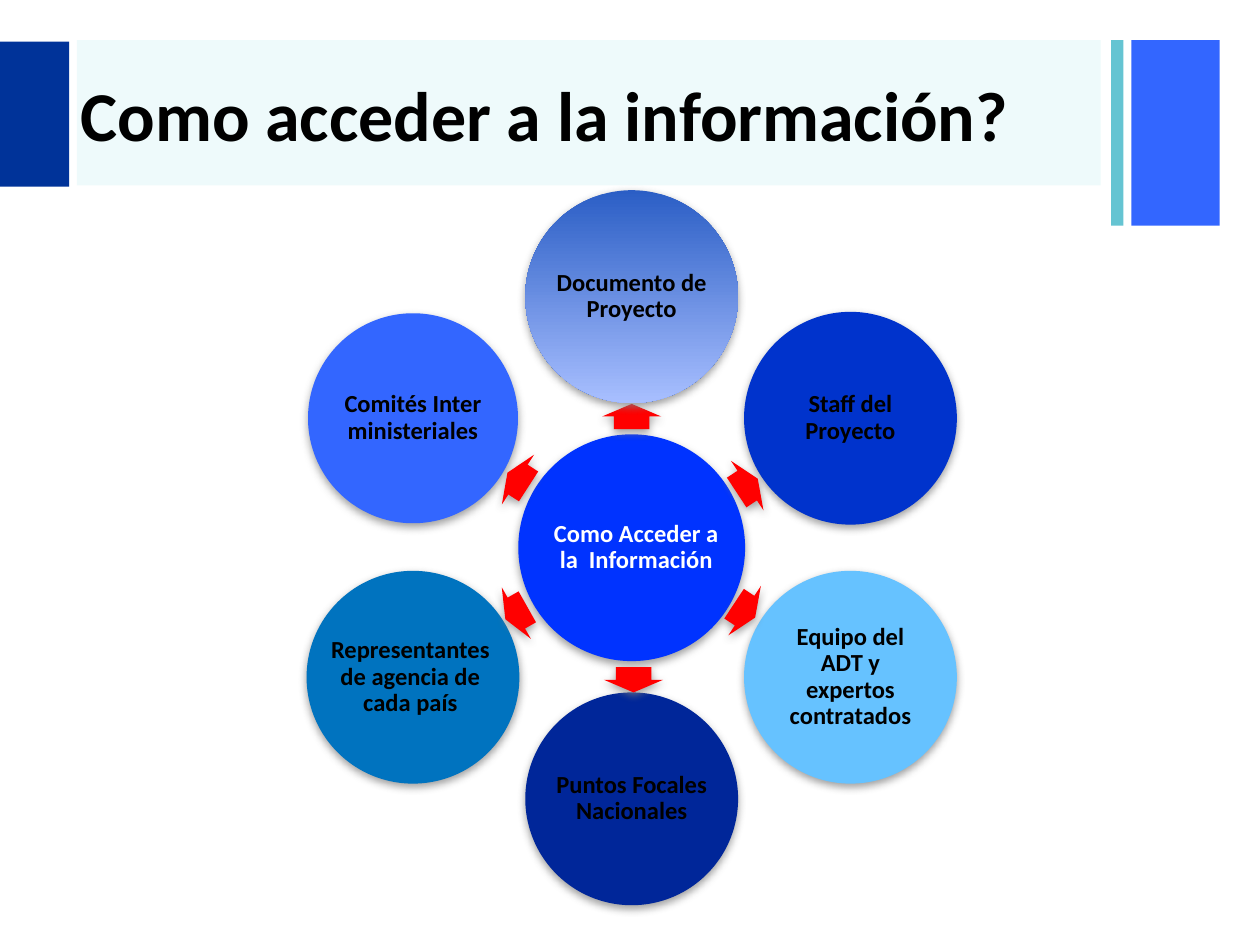
from dataclasses import dataclass

from lxml import etree
from pptx import Presentation
from pptx import util as u
from pptx.dml.color import RGBColor
from pptx.enum import shapes, text
from pptx.oxml import ns


@dataclass(frozen=True)
class Theme:
    font: str = "Calibri"
    title_size: float = 40
    label_size: float = 14
    black: str = "000000"
    white: str = "FFFFFF"
    navy: str = "003399"
    blue: str = "3366FF"
    teal: str = "65C4D2"
    banner: str = "14C5D0"
    hub: str = "0033FF"
    arrow: str = "FF0000"
    shadow: str = "808080"
    document: tuple = ("2B5EC5", "A8BFFF")
    staff: str = "0033CC"
    team: str = "66C2FF"
    focal: str = "002699"
    agency: str = "0073BF"


THEME = Theme()
HUB_X, HUB_Y = 361, 313
COLUMN_GAP, INNER_ROW, OUTER_ROW = 125, 74, 143.5
NODE_SIZE = 121.6


def add_child(parent, tag, **attributes):
    child = etree.SubElement(parent, ns.qn(tag))
    for key, value in attributes.items():
        child.set(key, str(value))
    return child


def write(slide, words, left, top, width, height, *, size, color,
          align=text.PP_ALIGN.LEFT, spacing=1.0, inset=(0, 0)):
    box = slide.shapes.add_textbox(u.Pt(left), u.Pt(top), u.Pt(width), u.Pt(height))
    frame = box.text_frame
    frame.word_wrap = True
    frame.vertical_anchor = text.MSO_ANCHOR.MIDDLE
    frame.margin_left = frame.margin_right = u.Pt(inset[0])
    frame.margin_top = frame.margin_bottom = u.Pt(inset[1])
    paragraph = frame.paragraphs[0]
    paragraph.alignment = align
    paragraph.line_spacing = spacing
    run = paragraph.add_run()
    run.text = words
    run.font.name = THEME.font
    run.font.size = u.Pt(size)
    run.font.bold = True
    run.font.color.rgb = RGBColor.from_string(color)


def add_figure(slide, kind, left, top, width, height, fill):
    """Draw a borderless preset shape; a pair of colours makes a vertical gradient."""
    figure = slide.shapes.add_shape(kind, u.Pt(left), u.Pt(top), u.Pt(width), u.Pt(height))
    figure.line.fill.background()
    figure.shadow.inherit = False
    if isinstance(fill, tuple):
        figure.fill.gradient()
        figure.fill.gradient_angle = 270
        for stop, color in zip(figure.fill.gradient_stops, fill):
            stop.color.rgb = RGBColor.from_string(color)
    else:
        figure.fill.solid()
        figure.fill.fore_color.rgb = RGBColor.from_string(fill)
    return figure


def cast_shadow(figure):
    effects = figure._element.spPr.find(ns.qn("a:effectLst"))
    shadow = add_child(effects, "a:outerShdw", blurRad=u.Pt(5), dist=u.Pt(2),
                       dir=5400000, rotWithShape=0)
    color = add_child(shadow, "a:srgbClr", val=THEME.shadow)
    add_child(color, "a:alpha", val=75000)


def add_circle(slide, words, x, y, size, fill, *, color=THEME.black,
               label_width=86.4, label_shift=0):
    circle = add_figure(slide, shapes.MSO_SHAPE.OVAL, x - size / 2, y - size / 2,
                        size, size, fill)
    cast_shadow(circle)
    write(slide, words, x + label_shift - label_width / 2, y - 43, label_width, 86,
          size=THEME.label_size, color=color, align=text.PP_ALIGN.CENTER, spacing=0.9)


def add_arrow(slide, x, y, rotation):
    width, height = 14.4, 33.8
    arrow = add_figure(slide, shapes.MSO_SHAPE.RIGHT_ARROW, x - width / 2, y - height / 2,
                       width, height, THEME.arrow)
    arrow.adjustments[0], arrow.adjustments[1] = 0.6, 0.5
    arrow.rotation = rotation
    cast_shadow(arrow)


def add_header(slide):
    rectangle = shapes.MSO_SHAPE.RECTANGLE
    add_figure(slide, rectangle, 646.5, 23, 50.5, 106, THEME.blue)
    add_figure(slide, rectangle, 635, 23, 7, 106, THEME.teal)
    banner = add_figure(slide, rectangle, 44, 23, 585, 83, THEME.banner)
    banner_color = banner._element.spPr.find(ns.qn("a:solidFill"))[0]
    add_child(banner_color, "a:alpha", val=7000)
    add_figure(slide, rectangle, 0, 23.75, 39.5, 83, THEME.navy)
    write(slide, "Como acceder a la información?", 39, 24.5, 595.5, 80.6,
          size=THEME.title_size, color=THEME.black, inset=(7.2, 3.6))


def add_wheel(slide):
    # Hub, with the upward arrow tucked behind the top circle
    add_circle(slide, "Como Acceder a la  Información", HUB_X, HUB_Y, 129.6, THEME.hub,
               color=THEME.white, label_width=100.8, label_shift=2.6)
    add_arrow(slide, HUB_X, 238, 270)

    # Sources, clockwise from the top: column and row offset from the hub
    sources = [
        ("Documento de Proyecto", 0, -OUTER_ROW, THEME.document, {}),
        ("Staff del Proyecto", 1, -INNER_ROW, THEME.staff, {}),
        ("Equipo del ADT y expertos contratados", 1, INNER_ROW, THEME.team, {}),
        ("Puntos Focales Nacionales", 0, OUTER_ROW, THEME.focal, {}),
        ("Representantes de agencia de cada país", -1, INNER_ROW, THEME.agency,
         {"label_width": 103, "label_shift": -1.5}),
        ("Comités Inter ministeriales", -1, -INNER_ROW, THEME.blue, {}),
    ]
    for words, column, row, fill, label in sources:
        size = 120 if fill == THEME.blue else NODE_SIZE
        add_circle(slide, words, HUB_X + column * COLUMN_GAP, HUB_Y + row,
                   size, fill, **label)

    # Remaining arrows: centre and rotation
    for x, y, rotation in [(296, 274, 212.9), (295, 350.3, 150.6), (362, 388.5, 90),
                           (427, 277.5, 326.7), (425.5, 349, 33.4)]:
        add_arrow(slide, x, y, rotation)


def main():
    deck = Presentation()
    deck.slide_width, deck.slide_height = u.Pt(720), u.Pt(540)
    slide = deck.slides.add_slide(deck.slide_layouts[6])
    add_header(slide)
    add_wheel(slide)
    deck.save("out.pptx")


if __name__ == "__main__":
    main()
